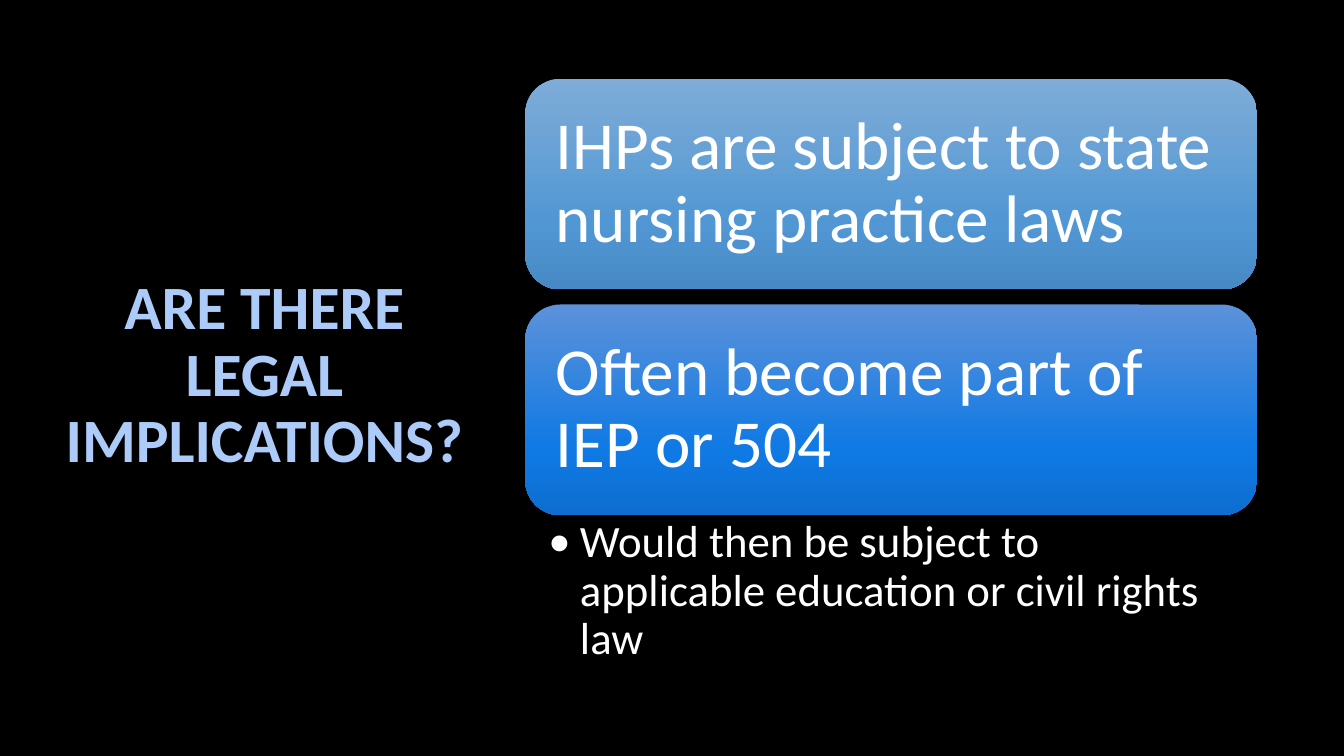
from copy import deepcopy
from dataclasses import dataclass

from lxml import etree
from pptx import Presentation
from pptx.dml.color import RGBColor
from pptx.enum.shapes import MSO_SHAPE
from pptx.enum.text import MSO_ANCHOR, PP_ALIGN
from pptx.oxml.ns import qn
from pptx.util import Pt

ROUNDED = MSO_SHAPE.ROUNDED_RECTANGLE
TOP, MIDDLE = MSO_ANCHOR.TOP, MSO_ANCHOR.MIDDLE
LEFT, CENTER = PP_ALIGN.LEFT, PP_ALIGN.CENTER

BLACK = RGBColor(0x00, 0x00, 0x00)
WHITE = RGBColor(0xFF, 0xFF, 0xFF)
PALE_BLUE = RGBColor(0xAC, 0xCB, 0xF9)
SKY = (RGBColor(0x7E, 0xAC, 0xD7), RGBColor(0x51, 0x97, 0xD4), RGBColor(0x47, 0x89, 0xC4))
AZURE = (RGBColor(0x5C, 0x92, 0xDA), RGBColor(0x0F, 0x79, 0xE4), RGBColor(0x0D, 0x6E, 0xCF))
STOPS = (0, 0.69, 1)

# Right column, in points
COL_X, COL_W = 375.2, 522.7
CARD_Y, CARD_H, CARD_STEP = 56.2, 150.5, 161.3
BULLET_INDENT = 22.5


@dataclass
class Card:
    text: str
    colors: tuple[RGBColor, ...]


CARDS = [
    Card("IHPs are subject to state nursing practice laws", SKY),
    Card("Often become part of IEP or 504", AZURE),
]


def write_text(sp, text: str, size: float, color: RGBColor = WHITE, bold: bool = False,
               align: int = LEFT, anchor: int = MIDDLE,
               insets: tuple[float, ...] = (7.2, 3.6, 7.2, 3.6)):
    """Fill a shape with one paragraph and return that paragraph."""
    tf = sp.text_frame
    tf.word_wrap = True
    tf.vertical_anchor = anchor
    for side, inset in zip(("left", "top", "right", "bottom"), insets):
        setattr(tf, f"margin_{side}", Pt(inset))
    p = tf.paragraphs[0]
    p.alignment = align
    p.line_spacing = 0.9
    r = p.add_run()
    r.text = text
    for name, value in {"name": "Calibri", "size": Pt(size), "bold": bold}.items():
        setattr(r.font, name, value)
    r.font.color.rgb = color
    return p


def add_text_box(s, x: float, y: float, w: float, h: float):
    return s.shapes.add_textbox(Pt(x), Pt(y), Pt(w), Pt(h))


def add_card(s, card: Card, y: float) -> None:
    sp = s.shapes.add_shape(ROUNDED, Pt(COL_X), Pt(y), Pt(COL_W), Pt(CARD_H))
    sp.shadow.inherit = False
    sp.line.fill.background()
    # Top-to-bottom gradient with a third stop
    sp.fill.gradient()
    sp.fill.gradient_angle = 270
    stop_list = next(sp._element.iter(qn("a:gsLst")))
    stop_list.append(deepcopy(stop_list[0]))
    for stop, position, color in zip(sp.fill.gradient_stops, STOPS, card.colors):
        stop.position = position
        stop.color.rgb = color
    write_text(sp, card.text, 48, insets=(14.4,) * 4)


def add_bullet(p, indent: float) -> None:
    pPr = p._p.get_or_add_pPr()
    pPr.set("marL", str(Pt(indent)))
    pPr.set("indent", str(-Pt(indent)))
    etree.SubElement(pPr, qn("a:buFont")).set("typeface", "Calibri")
    etree.SubElement(pPr, qn("a:buChar")).set("char", "•")


def main() -> None:
    prs = Presentation()
    prs.slide_width, prs.slide_height = Pt(960), Pt(540)
    s = prs.slides.add_slide(prs.slide_layouts[6])
    s.background.fill.solid()
    s.background.fill.fore_color.rgb = BLACK

    # Title
    title = add_text_box(s, 31.7, 48.2, 314.6, 441.4)
    write_text(title, "ARE THERE LEGAL IMPLICATIONS?", 44, PALE_BLUE, bold=True, align=CENTER)

    # Cards
    for i, card in enumerate(CARDS):
        add_card(s, card, CARD_Y + i * CARD_STEP)

    # Detail under the last card
    detail_y = CARD_Y + CARD_STEP + CARD_H
    detail = add_text_box(s, COL_X, detail_y, COL_W, 113.8)
    p = write_text(detail, "Would then be subject to applicable education or civil rights law", 32,
                   anchor=TOP, insets=(16.6, 2.9, 18, 2.9))
    add_bullet(p, BULLET_INDENT)

    prs.save("out.pptx")


if __name__ == "__main__":
    main()
